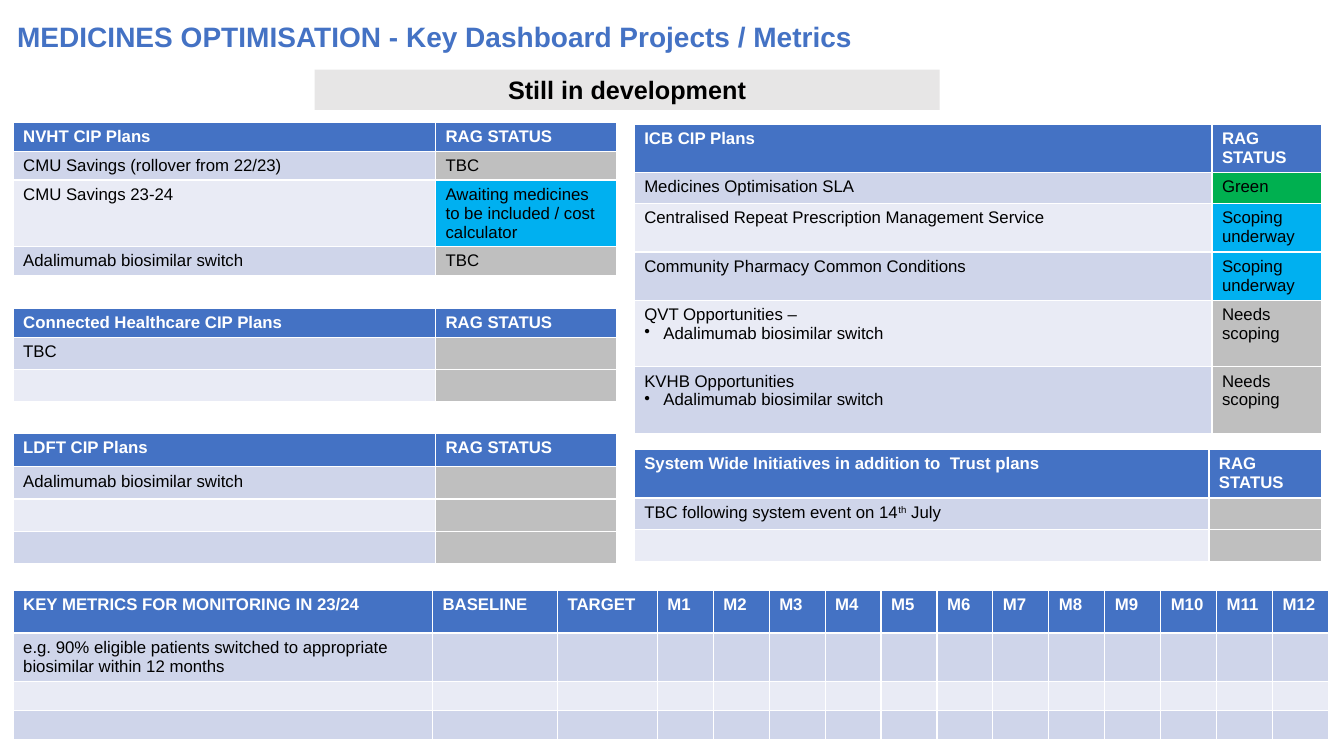
from dataclasses import dataclass

from lxml import etree
from pptx import Presentation
from pptx.dml.color import RGBColor
from pptx.enum.shapes import MSO_SHAPE
from pptx.enum.text import MSO_ANCHOR, PP_ALIGN
from pptx.oxml.ns import qn
from pptx.slide import Slide
from pptx.table import _Cell
from pptx.text.text import _Paragraph
from pptx.util import Inches, Pt

RECT = MSO_SHAPE.RECTANGLE
MIDDLE = MSO_ANCHOR.MIDDLE
CENTER = PP_ALIGN.CENTER
BULLET = "• "
RAISE = "^"  # encloses superscript text


@dataclass(frozen=True)
class Theme:
    font: str = "Arial"
    title: int = 20
    banner: int = 18
    body: int = 12
    blue: str = "4472C4"
    white: str = "FFFFFF"
    black: str = "000000"
    pale: str = "E7E6E6"
    bands: tuple[str, str] = ("CFD5EA", "E9EBF5")
    grey: str = "BFBFBF"
    green: str = "00B050"
    cyan: str = "00B0F0"


THEME = Theme()


@dataclass(frozen=True)
class Row:
    height: float
    label: str = ""
    status: str = ""
    color: str = THEME.grey


@dataclass(frozen=True)
class Grid:
    left: float
    top: float
    widths: list[float]
    heads: list[str]
    height: float
    rows: list[Row]
    rag: bool = True


LEFT, RIGHT = 0.13, 6.29
TRUST = [4.19, 1.8]
MONTHS = 12
MONTH = 0.555
SWITCH = "Adalimumab biosimilar switch"
RAG = "RAG STATUS"

GRIDS = [
    Grid(LEFT, 1.21, TRUST, ["NVHT CIP Plans", RAG], 0.29, [
        Row(0.28, "CMU Savings (rollover from 22/23)", "TBC"),
        Row(0.66, "CMU Savings 23-24",
            "Awaiting medicines to be included / cost calculator", THEME.cyan),
        Row(0.28, SWITCH, "TBC"),
    ]),
    Grid(LEFT, 3.06, TRUST, ["Connected Healthcare CIP Plans", RAG], 0.29, [
        Row(0.32, "TBC"),
        Row(0.32),
    ]),
    Grid(LEFT, 4.3, TRUST, ["LDFT CIP Plans", RAG], 0.33, [
        Row(0.32, SWITCH),
        Row(0.32),
        Row(0.32),
    ]),
    Grid(RIGHT, 1.23, [5.73, 1.09], ["ICB CIP Plans", RAG], 0.48, [
        Row(0.31, "Medicines Optimisation SLA", "Green", THEME.green),
        Row(0.48, "Centralised Repeat Prescription Management Service",
            "Scoping underway", THEME.cyan),
        Row(0.48, "Community Pharmacy Common Conditions",
            "Scoping underway", THEME.cyan),
        Row(0.66, f"QVT Opportunities –\n{BULLET}{SWITCH}", "Needs scoping"),
        Row(0.66, f"KVHB Opportunities\n{BULLET}{SWITCH}", "Needs scoping"),
    ]),
    Grid(RIGHT, 4.46, [5.7, 1.12],
         ["System Wide Initiatives in addition to  Trust plans", RAG], 0.48, [
        Row(0.31, "TBC following system event on 14^th^ July"),
        Row(0.32),
    ]),
    Grid(LEFT, 5.86, [4.16, 1.24, 0.99] + [MONTH] * MONTHS,
         ["KEY METRICS FOR MONITORING IN 23/24", "BASELINE", "TARGET"]
         + [f"M{n}" for n in range(1, MONTHS + 1)], 0.42, [
        Row(0.48, "e.g. 90% eligible patients switched to appropriate "
                  "biosimilar within 12 months"),
        Row(0.28),
        Row(0.28),
    ], rag=False),
]


def style(para: _Paragraph, size: int, color: str, bold: bool) -> None:
    font = para.font
    font.name, font.size, font.bold = THEME.font, Pt(size), bold
    font.color.rgb = RGBColor.from_string(color)


def add_bullet(para: _Paragraph) -> None:
    props = para._p.get_or_add_pPr()
    props.set("marL", str(Inches(0.19)))
    props.set("indent", str(-Inches(0.19)))
    mark = etree.Element(qn("a:buChar"), char=BULLET.strip())
    props.insert(0, mark)


def fill_cell(cell: _Cell, text: str, fill: str, head: bool = False) -> None:
    cell.fill.solid()
    cell.fill.fore_color.rgb = RGBColor.from_string(fill)
    frame = cell.text_frame
    for n, line in enumerate(text.split("\n")):
        para = frame.add_paragraph() if n else frame.paragraphs[0]
        style(para, THEME.body, THEME.white if head else THEME.black, head)
        if line.startswith(BULLET):
            add_bullet(para)
        for k, part in enumerate(line.removeprefix(BULLET).split(RAISE)):
            if not part:
                continue
            run = para.add_run()
            run.text = part
            if k % 2:
                run._r.get_or_add_rPr().set("baseline", "30000")


def add_grid(slide: Slide, grid: Grid) -> None:
    heights = [grid.height] + [row.height for row in grid.rows]
    table = slide.shapes.add_table(
        len(heights), len(grid.widths), Inches(grid.left), Inches(grid.top),
        Inches(sum(grid.widths)), Inches(sum(heights))).table
    for col, width in zip(table.columns, grid.widths):
        col.width = Inches(width)
    for line, height in zip(table.rows, heights):
        line.height = Inches(height)
    for c, head in enumerate(grid.heads):
        fill_cell(table.cell(0, c), head, THEME.blue, head=True)
    for r, row in enumerate(grid.rows):
        band = THEME.bands[r % 2]
        fill_cell(table.cell(r + 1, 0), row.label, band)
        for c in range(1, len(grid.widths)):
            fill_cell(table.cell(r + 1, c), row.status,
                      row.color if grid.rag else band)


def add_title(slide: Slide) -> None:
    box = slide.shapes.add_textbox(
        Inches(LEFT), Inches(0.15), Inches(8.42), Inches(0.42))
    frame = box.text_frame
    frame.word_wrap = False
    frame.vertical_anchor = MIDDLE
    frame.margin_left = frame.margin_right = Inches(0.04)
    frame.margin_top = frame.margin_bottom = Inches(0.04)
    frame.text = "MEDICINES OPTIMISATION - Key Dashboard Projects / Metrics"
    style(frame.paragraphs[0], THEME.title, THEME.blue, True)


def add_banner(slide: Slide) -> None:
    box = slide.shapes.add_shape(
        RECT, Inches(3.12), Inches(0.69), Inches(6.2), Inches(0.4))
    box.shadow.inherit = False
    box.fill.solid()
    box.fill.fore_color.rgb = RGBColor.from_string(THEME.pale)
    box.line.fill.background()
    frame = box.text_frame
    frame.word_wrap = True
    frame.vertical_anchor = MIDDLE
    frame.text = "Still in development"
    para = frame.paragraphs[0]
    para.alignment = CENTER
    style(para, THEME.banner, THEME.black, True)


def main() -> None:
    deck = Presentation()
    deck.slide_width, deck.slide_height = Inches(13.33), Inches(7.5)
    slide = deck.slides.add_slide(deck.slide_layouts[6])
    for grid in GRIDS:
        add_grid(slide, grid)
    add_title(slide)
    add_banner(slide)
    deck.save("out.pptx")


if __name__ == "__main__":
    main()
